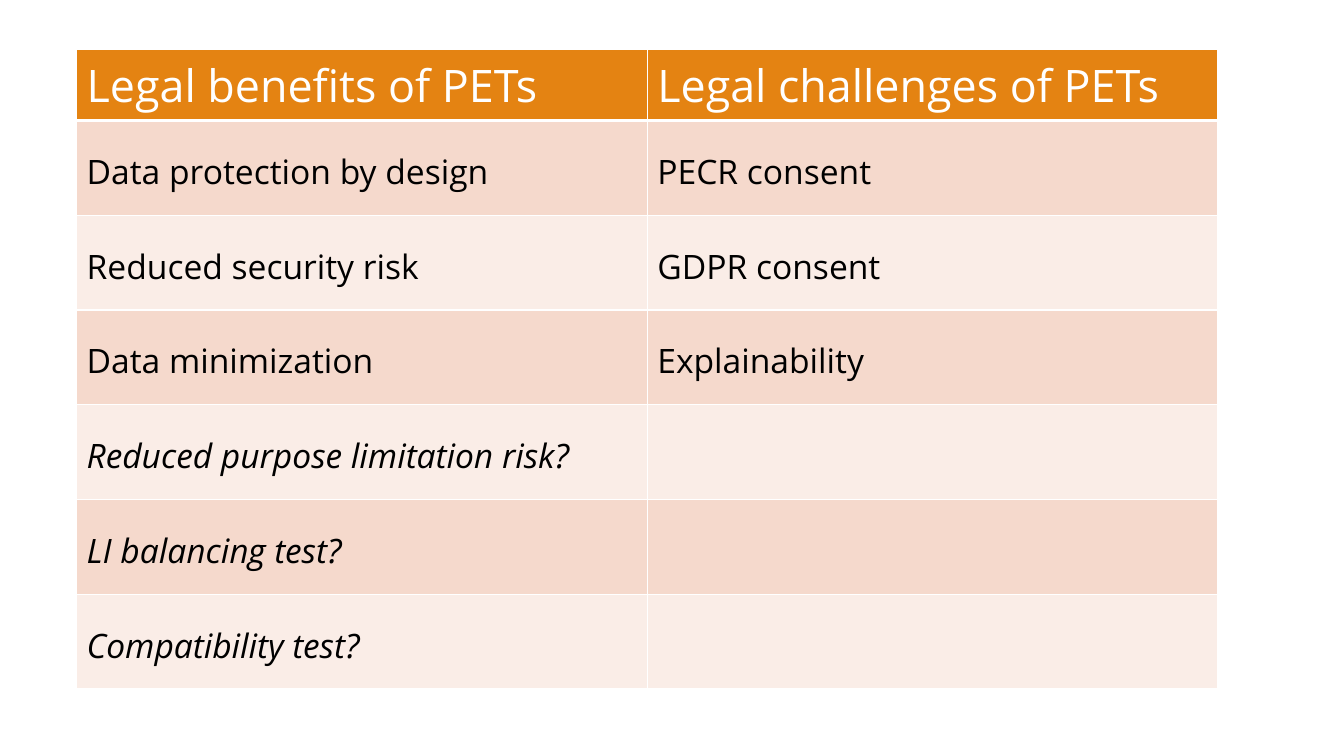
from dataclasses import dataclass

from lxml import etree
from pptx import Presentation, util as u
from pptx.dml.color import RGBColor
from pptx.oxml import ns

PX = 9144
FONT = "Open Sans"
WHITE = RGBColor(0xFF, 0xFF, 0xFF)
BLACK = RGBColor(0x00, 0x00, 0x00)
ORANGE = RGBColor(0xE4, 0x83, 0x12)
PEACH = RGBColor(0xF5, 0xD9, 0xCC)
PALE_PEACH = RGBColor(0xFA, 0xED, 0xE7)

LEFT, TOP = 76, 49
COLUMN_WIDTH = 566
HEADER_HEIGHT, BODY_HEIGHT = 54, 94


@dataclass(frozen=True)
class LegalRow:
    benefit: str
    challenge: str = ""
    italic: bool = False


HEADER = LegalRow("Legal benefits of PETs", "Legal challenges of PETs")
BODY = [
    LegalRow("Data protection by design", "PECR consent"),
    LegalRow("Reduced security risk", "GDPR consent"),
    LegalRow("Data minimization", "Explainability"),
    LegalRow("Reduced purpose limitation risk?", italic=True),
    LegalRow("LI balancing test?", italic=True),
    LegalRow("Compatibility test?", italic=True),
]


def px(length: int) -> u.Emu:
    return u.Emu(length * PX)


def write(cell, content: str, *, size: int, color: RGBColor, italic: bool = False,
          line_spacing: float = 1.0, space_after: int = 0) -> None:
    paragraph = cell.text_frame.paragraphs[0]
    paragraph.line_spacing = line_spacing
    paragraph.space_after = u.Pt(space_after)
    run = paragraph.add_run()
    run.text = content
    run.font.name = FONT
    run.font.size = u.Pt(size)
    run.font.bold = False
    run.font.italic = italic
    run.font.color.rgb = color


def style_cell(cell, fill: RGBColor, bottom_width: int) -> None:
    properties = cell._tc.get_or_add_tcPr()
    for side, width in {"L": 1, "R": 1, "T": 1, "B": bottom_width}.items():
        line = etree.SubElement(properties, ns.qn(f"a:ln{side}"), w=str(u.Pt(width)))
        solid = etree.SubElement(line, ns.qn("a:solidFill"))
        etree.SubElement(solid, ns.qn("a:srgbClr"), val=str(WHITE))
    cell.fill.solid()
    cell.fill.fore_color.rgb = fill


def add_legal_table(slide) -> None:
    height = HEADER_HEIGHT + len(BODY) * BODY_HEIGHT
    table = slide.shapes.add_table(len(BODY) + 1, 2, px(LEFT), px(TOP),
                                   px(2 * COLUMN_WIDTH), px(height)).table
    table.first_row = False
    table.horz_banding = False
    for column in table.columns:
        column.width = px(COLUMN_WIDTH)
    for index, row in enumerate([HEADER, *BODY]):
        is_header = index == 0
        table.rows[index].height = px(HEADER_HEIGHT if is_header else BODY_HEIGHT)
        fill = ORANGE if is_header else PEACH if index % 2 else PALE_PEACH
        for column_index, content in enumerate((row.benefit, row.challenge)):
            cell = table.cell(index, column_index)
            style_cell(cell, fill, bottom_width=3 if is_header else 1)
            if is_header:
                write(cell, content, size=32, color=WHITE, space_after=6)
            elif content:
                write(cell, content, size=24, color=BLACK, italic=row.italic,
                      line_spacing=1.5)


def main() -> None:
    presentation = Presentation()
    presentation.slide_width = px(1333)
    presentation.slide_height = px(750)
    slide = presentation.slides.add_slide(presentation.slide_layouts[6])
    add_legal_table(slide)
    presentation.save("out.pptx")


if __name__ == "__main__":
    main()
